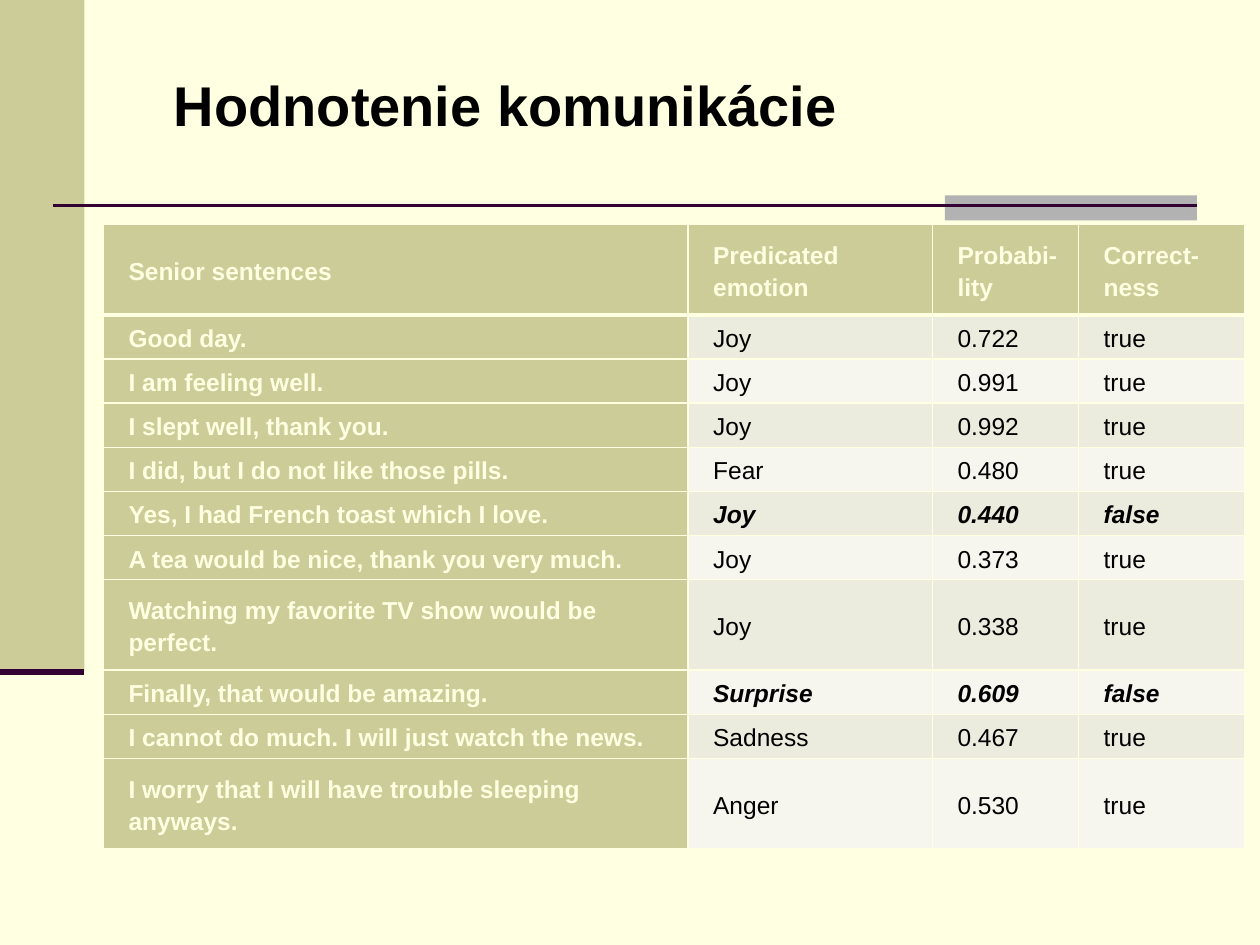
from dataclasses import dataclass
from lxml import etree
from pptx import Presentation
from pptx.dml.color import RGBColor
from pptx.enum.shapes import MSO_CONNECTOR, MSO_SHAPE
from pptx.enum.text import MSO_ANCHOR, MSO_AUTO_SIZE, PP_ALIGN
from pptx.oxml.ns import qn
from pptx.util import Inches, Pt

RECT = MSO_SHAPE.RECTANGLE
LINE = MSO_CONNECTOR.STRAIGHT
MID = MSO_ANCHOR.MIDDLE
LEFT = PP_ALIGN.LEFT
GROW = MSO_AUTO_SIZE.SHAPE_TO_FIT_TEXT


@dataclass
class Theme:
    font: str = "Arial"
    paper: str = "FFFFE1"
    olive: str = "CCCC99"
    gray: str = "B2B2B2"
    plum: str = "330033"
    ink: str = "000000"
    bands: tuple = ("ECECDE", "F6F6EF")
    title: int = 32
    body: int = 14


theme = Theme()


def style(par, size, color, bold, slant=False):
    for run in par.runs:
        font = run.font
        font.name, font.size = theme.font, Pt(size)
        font.bold, font.italic = bold, slant
        font.color.rgb = RGBColor.from_string(color)


def border(cell, side, width):
    line = etree.Element(qn("a:ln" + side), w=str(Pt(width)))
    fill = etree.SubElement(line, qn("a:solidFill"))
    etree.SubElement(fill, qn("a:srgbClr"), val=theme.paper)
    return line


deck = Presentation()
deck.slide_width, deck.slide_height = Inches(10), Inches(7.5)
slide = deck.slides.add_slide(deck.slide_layouts[5])
back = slide.background.fill
back.solid()
back.fore_color.rgb = RGBColor.from_string(theme.paper)

for x, y, w, h, color in [
    (0, 0, 0.67, 5.33, theme.olive),
    (7.5, 1.55, 2, 0.2, theme.gray),
]:
    bar = slide.shapes.add_shape(RECT, Inches(x), Inches(y), Inches(w), Inches(h))
    bar.shadow.inherit = False
    bar.fill.solid()
    bar.fill.fore_color.rgb = RGBColor.from_string(color)
    bar.line.fill.background()

for x, end, y, width in [(0.42, 9.5, 1.63, 1.5), (0, 0.67, 5.33, 3.5)]:
    rule = slide.shapes.add_connector(LINE, Inches(x), Inches(y), Inches(end), Inches(y))
    rule.line.width = Pt(width)
    rule.line.color.rgb = RGBColor.from_string(theme.plum)
    etree.SubElement(rule._element.spPr, qn("a:effectLst"))

title = slide.shapes.title
title.left, title.top = Inches(1.28), Inches(0.51)
title.width, title.height = Inches(5.5), Inches(0.64)
frame = title.text_frame
frame.text = "Hodnotenie komunikácie"
frame.word_wrap = False
frame.auto_size = GROW
frame.vertical_anchor = MID
frame.paragraphs[0].alignment = LEFT
style(frame.paragraphs[0], theme.title, theme.ink, True)

data = [
    ("Senior sentences", "Predicated emotion", "Probabi-lity", "Correct-ness"),
    ("Good day.", "Joy", "0.722", "true"),
    ("I am feeling well.", "Joy", "0.991", "true"),
    ("I slept well, thank you.", "Joy", "0.992", "true"),
    ("I did, but I do not like those pills.", "Fear", "0.480", "true"),
    ("Yes, I had French toast which I love.", "Joy", "0.440", "false"),
    ("A tea would be nice, thank you very much.", "Joy", "0.373", "true"),
    ("Watching my favorite TV show would be perfect.", "Joy", "0.338", "true"),
    ("Finally, that would be amazing.", "Surprise", "0.609", "false"),
    ("I cannot do much. I will just watch the news.", "Sadness", "0.467", "true"),
    ("I worry that I will have trouble sleeping anyways.", "Anger", "0.530", "true"),
]
widths = [4.64, 1.94, 1.16, 1.32]
tall = (0, 7, 10)
heights = [0.72 if r in tall else 0.35 for r in range(len(data))]

table = slide.shapes.add_table(
    len(data), len(widths), Inches(0.82), Inches(1.78),
    Inches(sum(widths)), Inches(sum(heights)),
).table
table.first_col = True
for col, width in zip(table.columns, widths):
    col.width = Inches(width)

for r, texts in enumerate(data):
    table.rows[r].height = Inches(heights[r])
    wrong = texts[-1] == "false"
    for c, text in enumerate(texts):
        cell = table.cell(r, c)
        head = r == 0 or c == 0
        cell.text = text
        cell.vertical_anchor = MID
        cell.margin_left = cell.margin_right = 0
        cell.margin_top = cell.margin_bottom = 0
        par = cell.text_frame.paragraphs[0]
        par.line_spacing = 1.15
        props = par._p.get_or_add_pPr()
        props.set("marL", str(Inches(0.2)))
        props.set("indent", "0")
        color = theme.paper if head else theme.ink
        style(par, theme.body, color, head or wrong, wrong and not head)
        cell.fill.solid()
        shade = theme.olive if head else theme.bands[(r - 1) % 2]
        cell.fill.fore_color.rgb = RGBColor.from_string(shade)
        edges = {"L": 1, "R": 1, "T": 3 if r == 1 else 1, "B": 3 if r == 0 else 1}
        for spot, (side, width) in enumerate(edges.items()):
            cell._tc.get_or_add_tcPr().insert(spot, border(cell, side, width))

deck.save("out.pptx")
